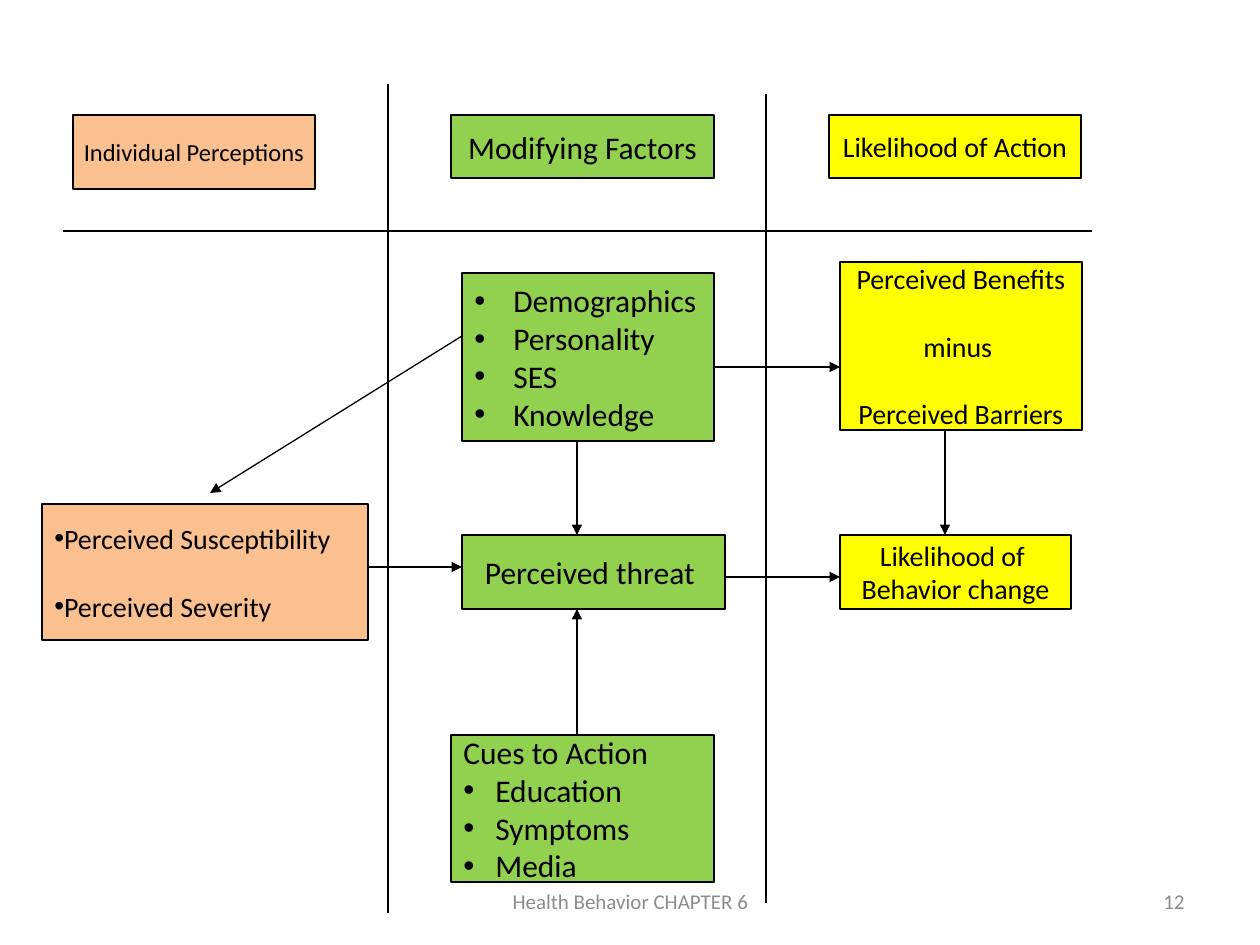
from lxml import etree
from pptx import Presentation, util as u
from pptx.dml.color import RGBColor
from pptx.enum import shapes, text
from pptx.oxml.ns import qn

SCALE = 914400 / 126
FONT = "Calibri"
COLORS = {"peach": "FAC090", "green": "92D050", "yellow": "FFFF00",
          "ink": "000000", "footer": "8C8C8C"}
LEFT, CENTER, RIGHT = text.PP_ALIGN.LEFT, text.PP_ALIGN.CENTER, text.PP_ALIGN.RIGHT

PLAIN = {}
LISTED = {"bullet": True, "indent": 39}
CUE = {"bullet": True, "indent": 32, "level": 1}
TIGHT = {"bullet": True, "indent": 0}
GAP = {"space_before": u.Pt(19.5)}

BOXES = [
    ((73, 115, 242, 74), "peach", 14, CENTER, [("Individual Perceptions", PLAIN)]),
    ((451, 115, 263, 63), "green", 18, CENTER, [("Modifying Factors", PLAIN)]),
    ((829, 115, 252, 63), "yellow", 16, CENTER, [("Likelihood of Action", PLAIN)]),
    ((462, 273, 252, 168), "green", 18, LEFT,
     [(item, LISTED) for item in ("Demographics", "Personality", "SES", "Knowledge")]),
    ((462, 535, 263, 74), "green", 18, CENTER, [("Perceived threat ", PLAIN)]),
    ((451, 735, 263, 147), "green", 18, LEFT,
     [("Cues to Action", PLAIN)] + [(cue, CUE) for cue in ("Education", "Symptoms", "Media")]),
    ((42, 504, 326, 136), "peach", 16, LEFT,
     [("Perceived Susceptibility", TIGHT), ("Perceived Severity", {**TIGHT, **GAP})]),
    ((840, 262, 242, 168), "yellow", 16, CENTER,
     [("Perceived Benefits", PLAIN), ("minus ", GAP), ("Perceived Barriers", GAP)]),
    ((840, 535, 231, 74), "yellow", 16, CENTER,
     [("Likelihood of ", PLAIN), ("Behavior change", PLAIN)]),
]
ARROWS = [
    (577, 441, 577, 535),
    (577, 735, 577, 609),
    (368, 567, 462, 567),
    (462, 336, 210, 493),
    (714, 367, 840, 367),
    (725, 577, 840, 577),
    (945, 430, 945, 535),
]
DIVIDERS = [(63, 231, 1092, 231), (388, 84, 388, 913), (766, 94, 766, 903)]
FOOTERS = [
    ((903, 876, 294, 50), RIGHT, "12"),
    ((431, 876, 399, 50), CENTER, "Health Behavior CHAPTER 6"),
]


def px(*lengths):
    return [u.Emu(round(length * SCALE)) for length in lengths]


def color(name):
    return RGBColor.from_string(COLORS[name])


def apply(target, values):
    for name, value in values.items():
        setattr(target, name, value)


def add_bullet(para, indent):
    props = para._p.get_or_add_pPr()
    hang = px(indent)[0]
    props.set("marL", str(hang))
    props.set("indent", str(-hang))
    etree.SubElement(props, qn("a:buFont"), typeface="Arial")
    etree.SubElement(props, qn("a:buChar"), char="•")


def write(box, lines, size, align, ink, wrap):
    frame = box.text_frame
    apply(frame, {"word_wrap": wrap, "vertical_anchor": text.MSO_ANCHOR.MIDDLE})
    for number, (line, layout) in enumerate(lines):
        para = frame.add_paragraph() if number else frame.paragraphs[0]
        values = dict(layout)
        indent = values.pop("indent", 0)
        if values.pop("bullet", False):
            add_bullet(para, indent)
        apply(para, {"alignment": align, **values})
        span = para.add_run()
        span.text = line
        apply(span.font, {"name": FONT, "size": u.Pt(size)})
        span.font.color.rgb = color(ink)


def outline(shape):
    shape.line.color.rgb = color("ink")
    shape.line.width = u.Pt(0.75)


def add_box(page, place, fill, size, align, lines):
    box = page.shapes.add_shape(shapes.MSO_SHAPE.RECTANGLE, *px(*place))
    box.shadow.inherit = False
    box.fill.solid()
    box.fill.fore_color.rgb = color(fill)
    outline(box)
    write(box, lines, size, align, "ink", False)


def add_line(page, ends, arrow):
    line = page.shapes.add_connector(shapes.MSO_CONNECTOR.STRAIGHT, *px(*ends))
    outline(line)
    if arrow:
        etree.SubElement(line.line._get_or_add_ln(), qn("a:tailEnd"), type="triangle")
    etree.SubElement(line._element.spPr, qn("a:effectLst"))


def main():
    deck = Presentation()
    deck.slide_width, deck.slide_height = px(1260, 945)
    page = deck.slides.add_slide(deck.slide_layouts[6])
    for box in BOXES:
        add_box(page, *box)
    for ends in ARROWS:
        add_line(page, ends, True)
    for ends in DIVIDERS:
        add_line(page, ends, False)
    for place, align, label in FOOTERS:
        box = page.shapes.add_textbox(*px(*place))
        write(box, [(label, PLAIN)], 12, align, "footer", True)
    deck.save("out.pptx")


if __name__ == "__main__":
    main()
